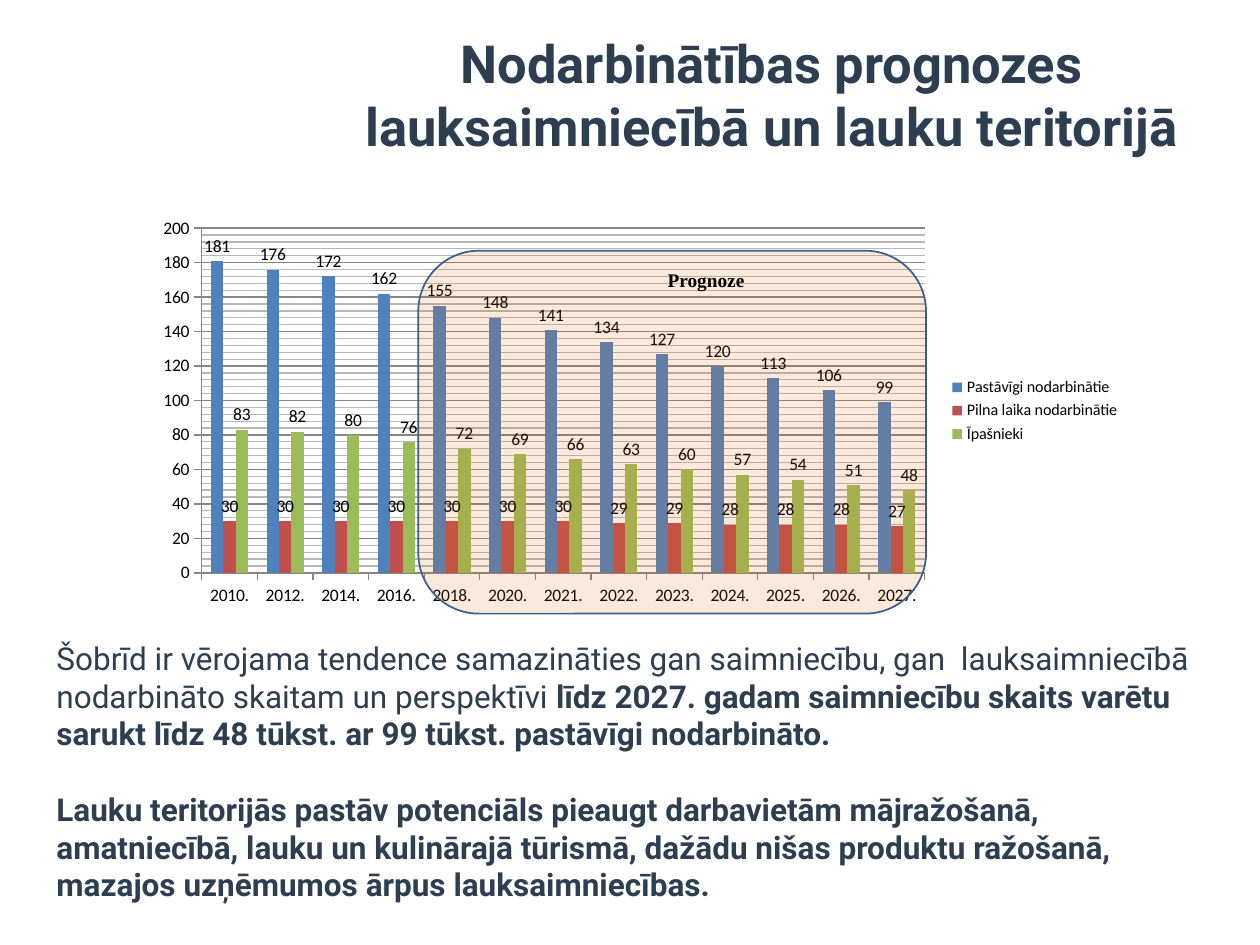
from copy import deepcopy

from lxml import etree
from pptx import Presentation
from pptx.chart.data import CategoryChartData
from pptx.dml.color import RGBColor
from pptx.enum.chart import XL_CHART_TYPE, XL_LABEL_POSITION, XL_LEGEND_POSITION, XL_TICK_MARK
from pptx.enum.shapes import MSO_SHAPE
from pptx.enum.text import MSO_ANCHOR, PP_ALIGN
from pptx.oxml import parse_xml
from pptx.oxml.ns import nsdecls, qn
from pptx.util import Inches, Pt

COLORS = {
    "text": "2C3E50", "black": "000000", "axis": "868686", "minor": "B7B7B7",
    "permanent": "4F81BD", "full_time": "C0504D", "owners": "9BBB59",
    "forecast": "E46C0A", "forecast_line": "3A5F8C",
}
TITLE = "Nodarbinātības prognozes lauksaimniecībā un lauku teritorijā"
# Each paragraph is a list of (text, bold) runs
PARAGRAPHS = [
    [("Šobrīd ir vērojama tendence samazināties gan saimniecību, gan  lauksaimniecībā "
      "nodarbināto skaitam un perspektīvi ", False),
     ("līdz 2027. gadam saimniecību skaits varētu sarukt līdz 48 tūkst. "
      "ar 99 tūkst. pastāvīgi nodarbināto.", True)],
    [("Lauku teritorijās pastāv potenciāls pieaugt darbavietām mājražošanā, amatniecībā, "
      "lauku un kulinārajā tūrismā, dažādu nišas produktu ražošanā, mazajos uzņēmumos "
      "ārpus lauksaimniecības.", True)],
]
YEARS = [2010, 2012, 2014, 2016, 2018, *range(2020, 2028)]
SERIES = [
    ("Pastāvīgi nodarbinātie", "permanent", "0",
     [181, 176, 172, 162, 155, 148, 141, 134, 127, 120, 113, 106, 99]),
    ("Pilna laika nodarbinātie", "full_time", "0",
     [30, 30, 30, 30, 30, 30, 30, 29, 29, 28, 28, 28, 27]),
    ("Īpašnieki", "owners", "#,##0",
     [83, 82, 80, 76, 72, 69, 66, 63, 60, 57, 54, 51, 48]),
]
PLOT_LAYOUT = {"x": 0.06, "y": 0.05, "w": 0.73, "h": 0.85}


def color(name):
    return RGBColor.from_string(COLORS[name])


def style_font(font, size, name="Calibri", tint="black", bold=False):
    font.size, font.name, font.bold = Pt(size), name, bold
    font.color.rgb = color(tint)


def style_line(line, tint, width=0.75):
    line.color.rgb = color(tint)
    line.width = Pt(width)


def box(left, top, width, height):
    return [Inches(v) for v in (left, top, width, height)]


prs = Presentation()
prs.slide_width, prs.slide_height = Inches(10), Inches(7.5)
slide = prs.slides.add_slide(prs.slide_layouts[5])

# Title
title = slide.shapes.title
title.left, title.top, title.width, title.height = box(2.79, 0.16, 6.67, 1.17)
title.text_frame.text = TITLE
title.text_frame.word_wrap = True
title.text_frame.vertical_anchor = MSO_ANCHOR.MIDDLE
heading = title.text_frame.paragraphs[0]
heading.alignment = PP_ALIGN.CENTER
style_font(heading.runs[0].font, 30, "Roboto", "text", True)

# Commentary below the chart
commentary = slide.shapes.add_textbox(*box(0.35, 5.02, 9.33, 2.22)).text_frame
commentary.word_wrap = True
for i, runs in enumerate(PARAGRAPHS):
    paragraph = commentary.add_paragraph() if i else commentary.paragraphs[0]
    if i:
        paragraph.space_before = Pt(21.5)
    for text, bold in runs:
        run = paragraph.add_run()
        run.text = text
        style_font(run.font, 18, "Roboto", "text", bold)

# Employment chart
data = CategoryChartData(number_format="0")
data.categories = [f"{year}." for year in YEARS]
for name, _, number_format, values in SERIES:
    data.add_series(name, values, number_format)
chart = slide.shapes.add_chart(
    XL_CHART_TYPE.COLUMN_CLUSTERED, *box(1.13, 1.65, 7.86, 3.22), data).chart
chart.has_title = False
style_font(chart.font, 10)
chart.has_legend = True
chart.legend.position = XL_LEGEND_POSITION.RIGHT
chart.legend.include_in_layout = False
style_font(chart.legend.font, 9.2)

plot = chart.plots[0]
plot.gap_width, plot.overlap = 150, 0
plot.vary_by_categories = False
for series, (_, tint, number_format, _) in zip(plot.series, SERIES):
    series.format.fill.solid()
    series.format.fill.fore_color.rgb = color(tint)
    labels = series.data_labels
    labels.show_value = True
    labels.position = XL_LABEL_POSITION.OUTSIDE_END
    labels.number_format, labels.number_format_is_linked = number_format, False
    style_font(labels.font, 10)

# Axes
for axis in (chart.category_axis, chart.value_axis):
    axis.major_tick_mark = XL_TICK_MARK.OUTSIDE
    axis.minor_tick_mark = XL_TICK_MARK.NONE
    style_font(axis.tick_labels.font, 10)
    style_line(axis.format.line, "axis")
scale = chart.value_axis
scale.minimum_scale, scale.maximum_scale = 0, 200
scale.major_unit, scale.minor_unit = 20, 4
scale.tick_labels.number_format, scale.tick_labels.number_format_is_linked = "0", False

# Gridlines: the minor ones take a copy of the line format in their own colour
scale.has_major_gridlines = scale.has_minor_gridlines = True
plot_area = chart.element.find(".//" + qn("c:plotArea"))
major, minor = (plot_area.find(".//" + qn(f"c:{kind}Gridlines")) for kind in ("major", "minor"))
grid_line = scale.major_gridlines.format.line
style_line(grid_line, "minor")
minor.append(deepcopy(major.find(qn("c:spPr"))))
style_line(grid_line, "axis")

# Fixed inner plot area
for old in plot_area.findall(qn("c:layout")):
    plot_area.remove(old)
settings = {"layoutTarget": "inner", "xMode": "edge", "yMode": "edge", **PLOT_LAYOUT}
layout = parse_xml(f"<c:layout {nsdecls('c')}><c:manualLayout/></c:layout>")
for tag, value in settings.items():
    etree.SubElement(layout[0], qn(f"c:{tag}")).set("val", str(value))
plot_area.insert(0, layout)

# Translucent forecast area
forecast = slide.shapes.add_shape(MSO_SHAPE.ROUNDED_RECTANGLE, *box(3.32, 1.99, 4.03, 2.88))
forecast.shadow.inherit = False
forecast.fill.solid()
forecast.fill.fore_color.rgb = color("forecast")
fill_color = forecast.element.find(".//" + qn("a:srgbClr"))
etree.SubElement(fill_color, qn("a:alpha")).set("val", "14000")
style_line(forecast.line, "forecast_line", 1)

# Forecast label
forecast_label = slide.shapes.add_textbox(*box(5.2, 2.08, 1.07, 0.31)).text_frame
forecast_label.word_wrap = True
forecast_label.text = "Prognoze"
style_font(forecast_label.paragraphs[0].runs[0].font, 11, "Times New Roman", bold=True)

prs.save("out.pptx")
